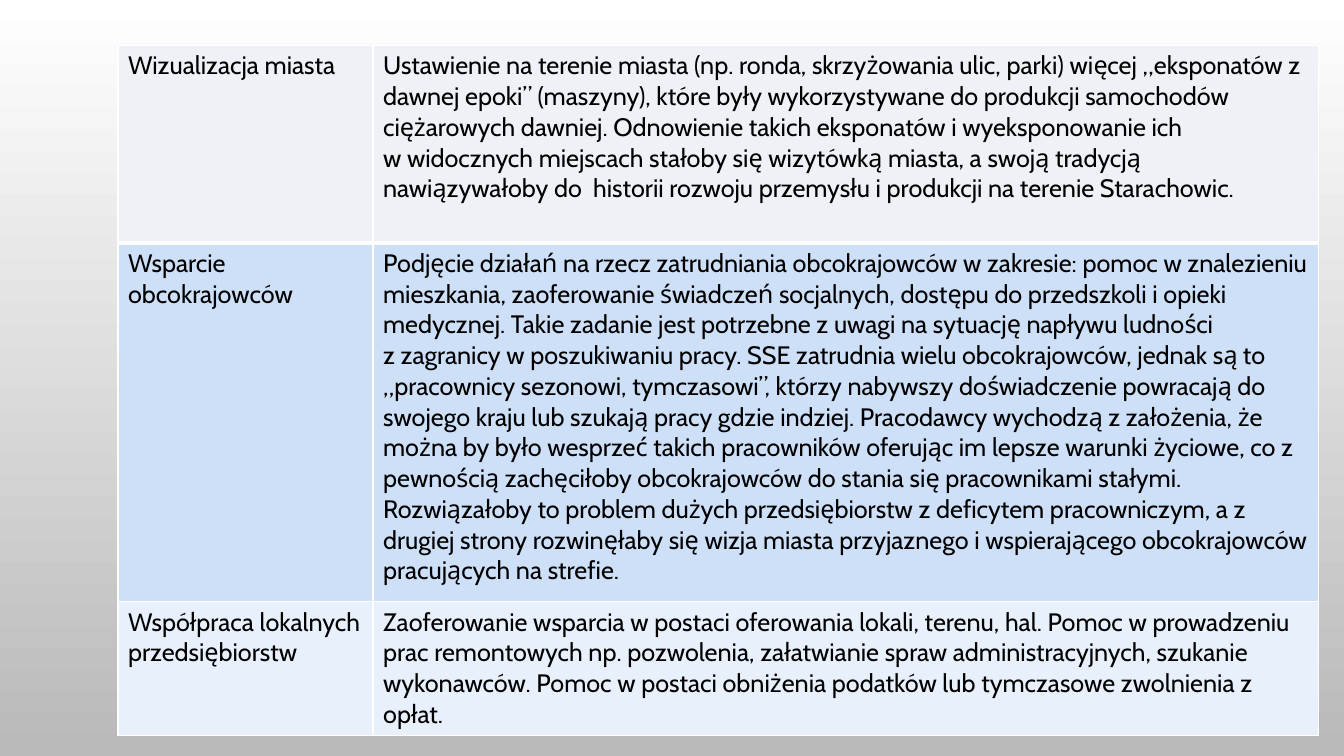
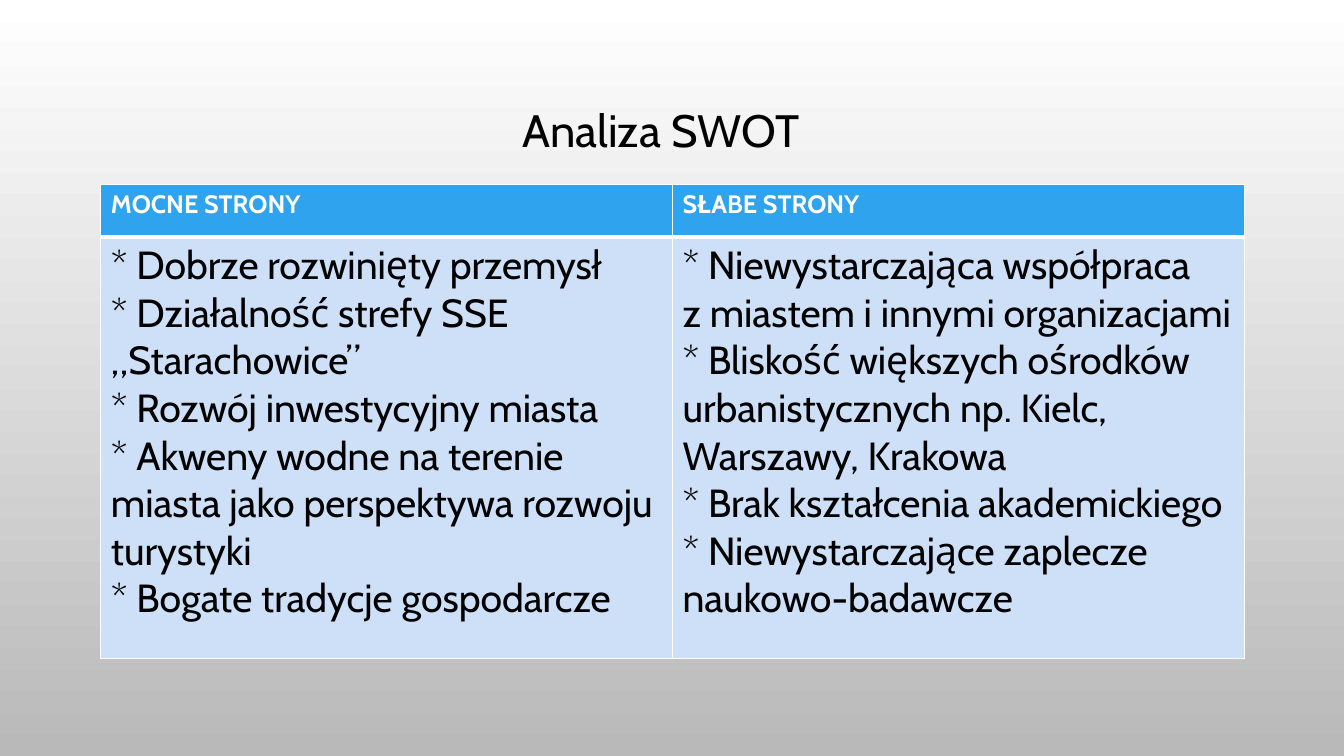
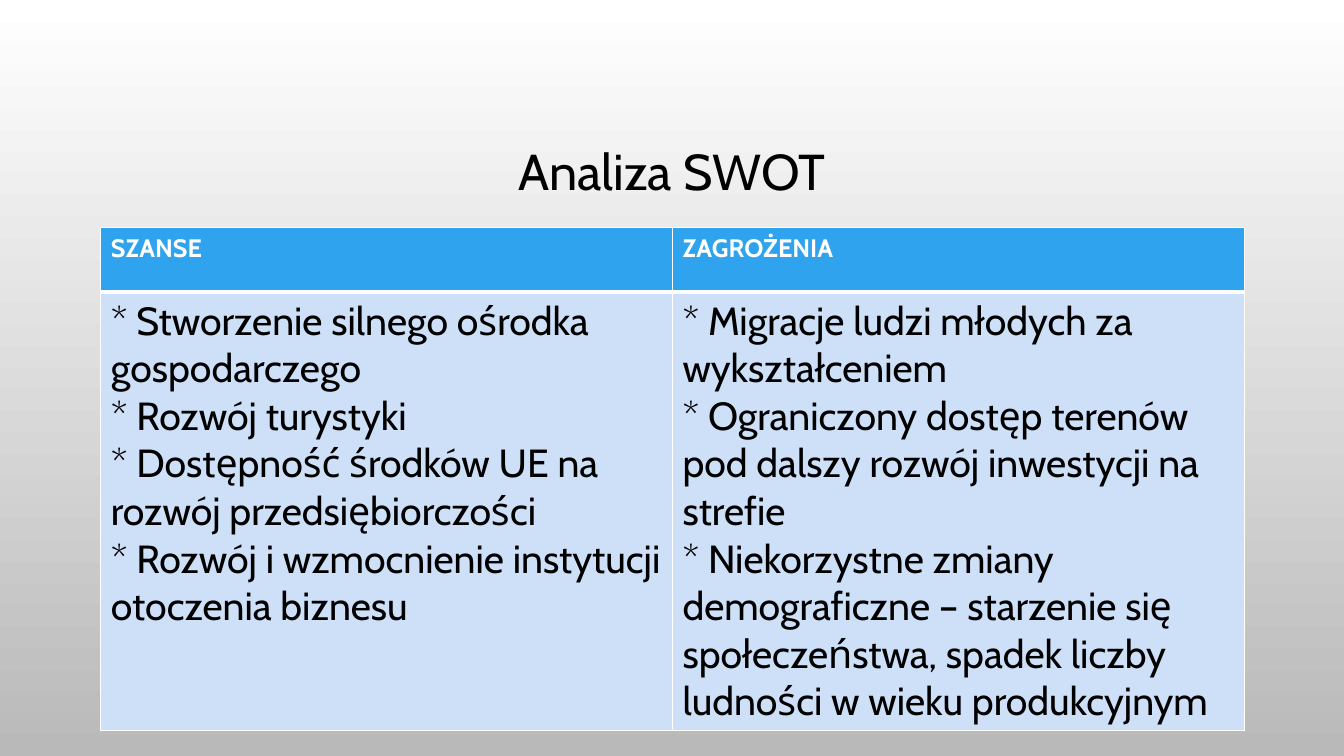
"""Build three slides on city development tasks and a SWOT analysis."""
from lxml import etree
from pptx import Presentation
from pptx import util as u
from pptx.dml.color import RGBColor
from pptx.enum import text
from pptx.oxml.ns import qn

FONT = "Cabin"
COLORS = {
    "white": "FFFFFF", "grey": "B9B9B9", "black": "000000", "header": "2FA3EE",
    "mist": "EEF2F7", "sky": "CDE0F8", "pale": "E8F0FC",
}
TITLE_ONLY, BLANK = 5, 6

TASKS = [
    ("Wizualizacja miasta", [
        "Ustawienie na terenie miasta (np. ronda, skrzyżowania ulic, parki) więcej „eksponatów z "
        "dawnej epoki” (maszyny), które były wykorzystywane do produkcji samochodów ciężarowych "
        "dawniej. Odnowienie takich eksponatów i wyeksponowanie ich ",
        "w widocznych miejscach stałoby się wizytówką miasta, a swoją tradycją nawiązywałoby do  "
        "historii rozwoju przemysłu i produkcji na terenie Starachowic.",
    ]),
    ("Wsparcie obcokrajowców", [
        "Podjęcie działań na rzecz zatrudniania obcokrajowców w zakresie: pomoc w znalezieniu "
        "mieszkania, zaoferowanie świadczeń socjalnych, dostępu do przedszkoli i opieki "
        "medycznej. Takie zadanie jest potrzebne z uwagi na sytuację napływu ludności ",
        "z zagranicy w poszukiwaniu pracy. SSE zatrudnia wielu obcokrajowców, jednak są to "
        "„pracownicy sezonowi, tymczasowi”, którzy nabywszy doświadczenie powracają do swojego "
        "kraju lub szukają pracy gdzie indziej. Pracodawcy wychodzą z założenia, że można by było "
        "wesprzeć takich pracowników oferując im lepsze warunki życiowe, co z pewnością "
        "zachęciłoby obcokrajowców do stania się pracownikami stałymi. Rozwiązałoby to problem "
        "dużych przedsiębiorstw z deficytem pracowniczym, a z drugiej strony rozwinęłaby się "
        "wizja miasta przyjaznego i wspierającego obcokrajowców pracujących na strefie.",
    ]),
    ("Współpraca lokalnych przedsiębiorstw", [
        "Zaoferowanie wsparcia w postaci oferowania lokali, terenu, hal. Pomoc w prowadzeniu prac "
        "remontowych np. pozwolenia, załatwianie spraw administracyjnych, szukanie wykonawców. "
        "Pomoc w postaci obniżenia podatków lub tymczasowe zwolnienia z opłat.",
    ]),
]

SWOT = [
    {
        "title": "Analiza SWOT", "size": 32.4, "title_at": (0.89, 0.9, 11.33, 0.84),
        "top": 1.83, "rows": (0.52, 4.18),
        "columns": {
            "MOCNE STRONY": [
                "* Dobrze rozwinięty przemysł",
                "* Działalność strefy SSE „Starachowice”",
                "* Rozwój inwestycyjny miasta",
                "* Akweny wodne na terenie miasta jako perspektywa rozwoju turystyki",
                "* Bogate tradycje gospodarcze",
            ],
            "SŁABE STRONY": [
                "* Niewystarczająca współpraca \nz miastem i innymi organizacjami",
                "* Bliskość większych ośrodków urbanistycznych np. Kielc, Warszawy, Krakowa",
                "* Brak kształcenia akademickiego",
                "* Niewystarczające zaplecze naukowo-badawcze",
            ],
        },
    },
    {
        "title": "Analiza SWOT", "size": 36, "title_at": (1, 1.21, 11.33, 1.04),
        "top": 2.26, "rows": (0.64, 4.34),
        "columns": {
            "SZANSE": [
                "* Stworzenie silnego ośrodka gospodarczego",
                "* Rozwój turystyki",
                "* Dostępność środków UE na rozwój przedsiębiorczości",
                "* Rozwój i wzmocnienie instytucji otoczenia biznesu",
            ],
            "ZAGROŻENIA": [
                "* Migracje ludzi młodych za wykształceniem",
                "* Ograniczony dostęp terenów pod dalszy rozwój inwestycji na strefie",
                "* Niekorzystne zmiany demograficzne – starzenie się społeczeństwa, "
                "spadek liczby ludności w wieku produkcyjnym",
            ],
        },
    },
]


def rgb(name):
    return RGBColor.from_string(COLORS[name])


def write(frame, lines, size, color, bold=False):
    for index, line in enumerate(lines):
        para = frame.add_paragraph() if index else frame.paragraphs[0]
        para.text = line
        for span in para.runs:
            span.font.name, span.font.size, span.font.bold = FONT, u.Pt(size), bold
            span.font.color.rgb = rgb(color)


def set_borders(cell, widths):
    properties = cell._tc.get_or_add_tcPr()
    for index, (side, width) in enumerate(widths.items()):
        line = etree.Element(qn(f"a:ln{side}"), w=str(u.Pt(width)))
        fill = etree.SubElement(line, qn("a:solidFill"))
        etree.SubElement(fill, qn("a:srgbClr"), val=COLORS["white"])
        properties.insert(index, line)


def add_grid(slide, left, top, widths, heights, rows):
    """Add a table whose rows hold dicts of lines, fill, size, color and bold."""
    table = slide.shapes.add_table(
        len(heights), len(widths), u.Inches(left), u.Inches(top),
        u.Inches(sum(widths)), u.Inches(sum(heights))).table
    for column, width in zip(table.columns, widths):
        column.width = u.Inches(width)
    for index, (row, height, contents) in enumerate(zip(table.rows, heights, rows)):
        row.height = u.Inches(height)
        for cell, content in zip(row.cells, contents):
            cell.fill.solid()
            cell.fill.fore_color.rgb = rgb(content["fill"])
            write(cell.text_frame, content["lines"], content["size"],
                  content["color"], content.get("bold", False))
            set_borders(cell, {"L": 1, "R": 1, "T": 3 if index == 1 else 1,
                               "B": 3 if index == 0 else 1})


def add_title(slide, wording, size, place):
    title = slide.shapes.title
    title.left, title.top, title.width, title.height = map(u.Inches, place)
    frame = title.text_frame
    frame.word_wrap = True
    frame.auto_size = text.MSO_AUTO_SIZE.NONE
    frame.vertical_anchor = text.MSO_ANCHOR.MIDDLE
    write(frame, [wording], size, "black")
    frame.paragraphs[0].alignment = text.PP_ALIGN.CENTER
    frame.paragraphs[0].line_spacing = 0.9


def add_tasks(deck):
    slide = deck.slides.add_slide(deck.slide_layouts[BLANK])
    rows = [[{"lines": [wording], "fill": fill, "size": 18, "color": "black"}
             for wording in (name, "\n".join(lines))]
            for (name, lines), fill in zip(TASKS, ("mist", "sky", "pale"))]
    add_grid(slide, 1.17, 0.45, (2.53, 9.38), (1.96, 3.56, 1.33), rows)


def add_swot(deck, part):
    slide = deck.slides.add_slide(deck.slide_layouts[TITLE_ONLY])
    add_title(slide, part["title"], part["size"], part["title_at"])
    heads = [{"lines": [head], "fill": "header", "size": 18, "color": "white", "bold": True}
             for head in part["columns"]]
    bodies = [{"lines": points, "fill": "sky", "size": 28, "color": "black"}
              for points in part["columns"].values()]
    add_grid(slide, 1, part["top"], (5.67, 5.67), part["rows"], (heads, bodies))


def main():
    deck = Presentation()
    deck.slide_width, deck.slide_height = u.Inches(13.33), u.Inches(7.5)
    backdrop = deck.slide_master.background.fill
    backdrop.gradient()
    backdrop.gradient_angle = 270
    for stop, color in zip(backdrop.gradient_stops, ("white", "grey")):
        stop.color.rgb = rgb(color)
    add_tasks(deck)
    for part in SWOT:
        add_swot(deck, part)
    deck.save("out.pptx")


if __name__ == "__main__":
    main()
